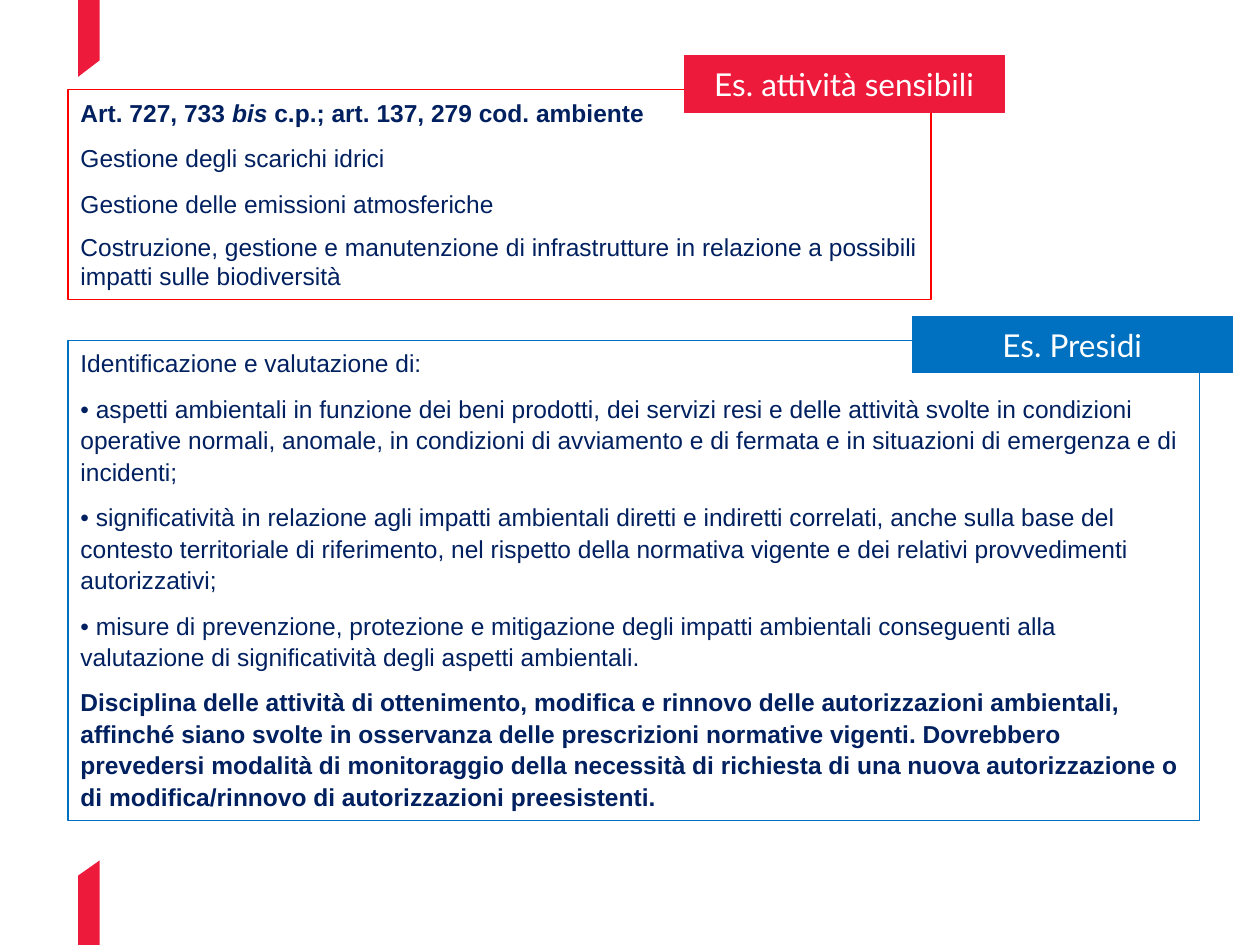
from pptx import Presentation
from pptx.dml.color import RGBColor
from pptx.enum.shapes import MSO_SHAPE
from pptx.enum.text import MSO_ANCHOR, PP_ALIGN
from pptx.util import Inches, Pt

COLORS = {"red": "ED1A3B", "frame_red": "FF0000", "blue": "0070C0",
          "navy": "002060", "white": "FFFFFF"}

# Each paragraph is a list of (text, style) runs.
ACTIVITIES = [
    [("Art. 727, 733 ", "b"), ("bis ", "bi"),
     ("c.p.; art. 137, 279 cod. ambiente", "b")],
    [("Gestione degli scarichi idrici", "")],
    [("Gestione delle emissioni atmosferiche", "")],
    [("Costruzione, gestione e manutenzione di infrastrutture in relazione a "
      "possibili impatti sulle biodiversità", "")],
]
CONTROLS = [
    [("Identificazione e valutazione di:", "")],
    [("• aspetti ambientali in funzione dei beni prodotti, dei servizi resi e "
      "delle attività svolte in condizioni operative normali, anomale, in "
      "condizioni di avviamento e di fermata e in situazioni di emergenza e di "
      "incidenti;", "")],
    [("• significatività in relazione agli impatti ambientali diretti e "
      "indiretti correlati, anche sulla base del contesto territoriale di "
      "riferimento, nel rispetto della normativa vigente e dei relativi "
      "provvedimenti autorizzativi;", "")],
    [("• misure di prevenzione, protezione e mitigazione degli impatti "
      "ambientali conseguenti alla valutazione di significatività degli "
      "aspetti ambientali.", "")],
    [("Disciplina delle attività di ottenimento, modifica e rinnovo delle "
      "autorizzazioni ambientali, affinché siano svolte in osservanza delle "
      "prescrizioni normative vigenti. Dovrebbero prevedersi modalità di "
      "monitoraggio della necessità di richiesta di una nuova autorizzazione o "
      "di modifica/rinnovo di autorizzazioni preesistenti.", "b")],
]

# Frame: top, width, height. Label: left, top.
SECTIONS = [
    {"paragraphs": ACTIVITIES, "frame": (0.71, 6.85, 1.67), "line": "frame_red",
     "tight_last": True,
     "label": "Es. attività sensibili", "label_at": (5.43, 0.44), "fill": "red"},
    {"paragraphs": CONTROLS, "frame": (2.7, 8.98, 3.81), "line": "blue",
     "tight_last": False,
     "label": "Es. Presidi", "label_at": (7.24, 2.51), "fill": "blue"},
]
FRAME_LEFT = 0.54
LABEL_SIZE = (2.54, 0.45)
RIBBONS = [
    [(0.62, 6.95), (0.62, 7.5), (0.79, 7.5), (0.79, 6.83)],
    [(0.79, 0.48), (0.79, 0), (0.62, 0), (0.62, 0.61)],
]


def rgb(name):
    return RGBColor.from_string(COLORS[name])


def add_rectangle(slide, box, line, line_width, fill=None):
    shape = slide.shapes.add_shape(MSO_SHAPE.RECTANGLE, *map(Inches, box))
    shape.shadow.inherit = False
    if fill:
        shape.fill.solid()
        shape.fill.fore_color.rgb = rgb(fill)
    else:
        shape.fill.background()
    shape.line.color.rgb = rgb(line)
    shape.line.width = Pt(line_width)
    shape.text_frame.word_wrap = True
    return shape


def write_paragraph(paragraph, runs, size=14, font="Arial", color="navy",
                    align=PP_ALIGN.LEFT, spacing=1.0, after=0):
    paragraph.alignment = align
    paragraph.line_spacing = spacing
    paragraph.space_after = Pt(after)
    for text, style in runs:
        run = paragraph.add_run()
        run.text = text
        run.font.size = Pt(size)
        run.font.name = font
        run.font.color.rgb = rgb(color)
        run.font.bold = "b" in style
        run.font.italic = "i" in style


def add_ribbon(slide, points):
    corners = [(Inches(x), Inches(y)) for x, y in points]
    builder = slide.shapes.build_freeform(*corners[0])
    builder.add_line_segments(corners[1:], close=True)
    shape = builder.convert_to_shape()
    shape.shadow.inherit = False
    shape.fill.solid()
    shape.fill.fore_color.rgb = rgb("red")
    shape.line.fill.background()


def add_frame(slide, section):
    frame = add_rectangle(slide, (FRAME_LEFT, *section["frame"]),
                          section["line"], 0.75)
    text_frame = frame.text_frame
    text_frame.vertical_anchor = MSO_ANCHOR.TOP
    last = len(section["paragraphs"]) - 1
    for index, runs in enumerate(section["paragraphs"]):
        paragraph = text_frame.add_paragraph() if index else text_frame.paragraphs[0]
        tight = section["tight_last"] and index == last
        write_paragraph(paragraph, runs, spacing=1.0 if tight else 1.07,
                        after=0 if tight else 8)


def add_label(slide, section):
    label = add_rectangle(slide, (*section["label_at"], *LABEL_SIZE),
                          section["fill"], 0.5, fill=section["fill"])
    text_frame = label.text_frame
    text_frame.vertical_anchor = MSO_ANCHOR.MIDDLE
    for side in ("left", "top", "right", "bottom"):
        setattr(text_frame, f"margin_{side}", Inches(0.08))
    write_paragraph(text_frame.paragraphs[0], [(section["label"], "")], size=18,
                    font="Lato", color="white", align=PP_ALIGN.CENTER)


def main():
    presentation = Presentation()
    presentation.slide_width = Inches(10)
    presentation.slide_height = Inches(7.5)
    slide = presentation.slides.add_slide(presentation.slide_layouts[6])
    for points in RIBBONS:
        add_ribbon(slide, points)
    for add_part in (add_frame, add_label):
        for section in SECTIONS:
            add_part(slide, section)
    presentation.save("out.pptx")


if __name__ == "__main__":
    main()
